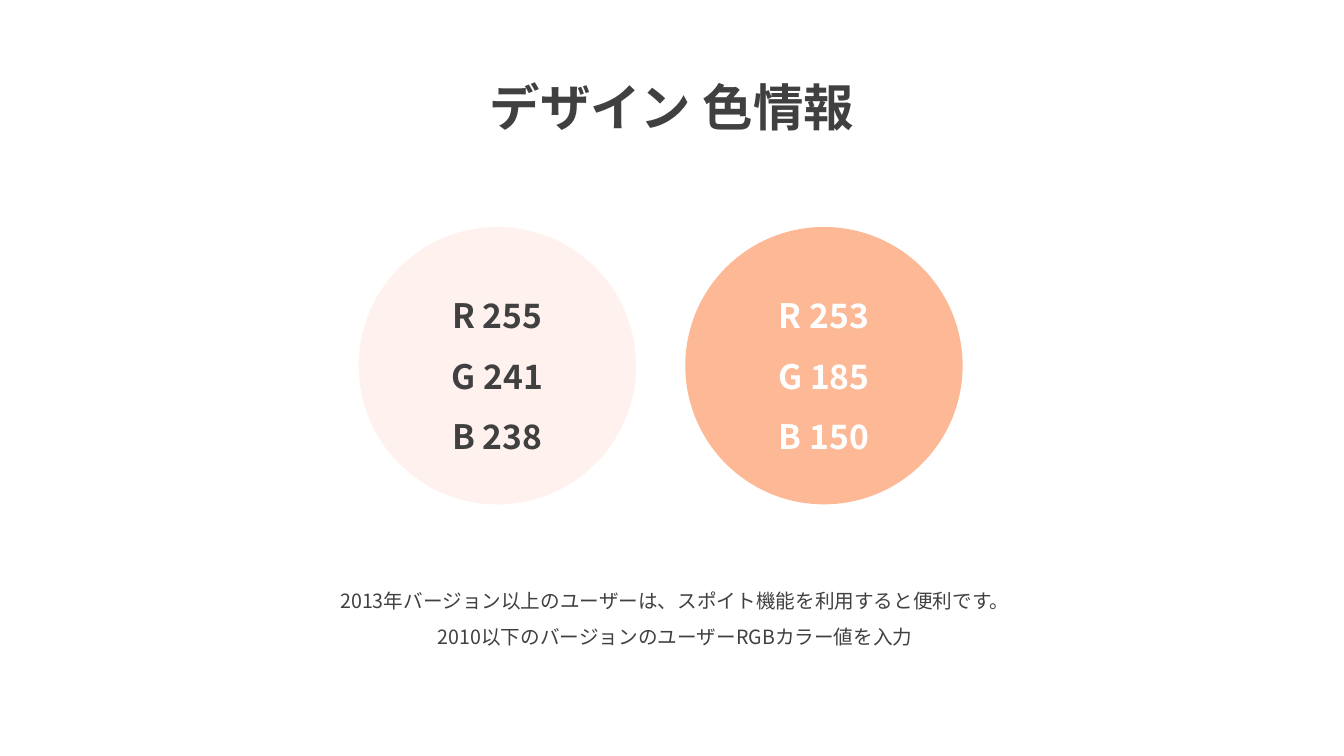
from lxml import etree
from pptx import Presentation
from pptx.dml.color import RGBColor
from pptx.enum.shapes import MSO_SHAPE
from pptx.enum.text import MSO_ANCHOR, MSO_AUTO_SIZE, PP_ALIGN
from pptx.oxml.ns import qn
from pptx.util import Cm, Pt

OVAL = MSO_SHAPE.OVAL
TOP, MIDDLE = MSO_ANCHOR.TOP, MSO_ANCHOR.MIDDLE
CENTER = PP_ALIGN.CENTER
NO_AUTOFIT = MSO_AUTO_SIZE.NONE

FONT = "Noto Sans CJK KR"
DARK = RGBColor(0x40, 0x40, 0x40)
WHITE = RGBColor(0xFF, 0xFF, 0xFF)
BLUSH = RGBColor(255, 241, 238)
PEACH = RGBColor(253, 185, 150)

TITLE = "デザイン 色情報"
SWATCHES = [(BLUSH, DARK), (PEACH, WHITE)]
NOTES = [
    "2013年バージョン以上のユーザーは、スポイト機能を利用すると便利です。",
    "2010以下のバージョンのユーザーRGBカラー値を入力",
]

SWATCH_LEFT, SWATCH_TOP = 9.04, 5.72
SWATCH_SIZE, SWATCH_GAP = 6.99, 1.24


def write_lines(shape, lines, size, color, bold, anchor):
    frame = shape.text_frame
    frame.word_wrap = True
    frame.auto_size = NO_AUTOFIT
    frame.vertical_anchor = anchor
    for index, line in enumerate(lines):
        paragraph = frame.add_paragraph() if index else frame.paragraphs[0]
        paragraph.alignment = CENTER
        paragraph.line_spacing = 1.5
        run = paragraph.add_run()
        run.text = line
        font = run.font
        font.name = FONT
        font.size = Pt(size)
        font.bold = bold
        font.color.rgb = color
        properties = run._r.get_or_add_rPr()
        etree.SubElement(properties, qn("a:ea")).set("typeface", FONT)


def add_swatch(slide, index, fill, text_color):
    left = SWATCH_LEFT + index * (SWATCH_SIZE + SWATCH_GAP)
    swatch = slide.shapes.add_shape(
        OVAL, Cm(left), Cm(SWATCH_TOP), Cm(SWATCH_SIZE), Cm(SWATCH_SIZE))
    swatch.shadow.inherit = False
    swatch.fill.solid()
    swatch.fill.fore_color.rgb = fill
    swatch.line.fill.background()
    lines = [f"{channel} {value}" for channel, value in zip("RGB", fill)]
    write_lines(swatch, lines, 24, text_color, True, MIDDLE)


def main():
    presentation = Presentation()
    presentation.slide_width = Cm(33.87)
    presentation.slide_height = Cm(19.05)
    slide = presentation.slides.add_slide(presentation.slide_layouts[5])

    title = slide.shapes.title
    title.left, title.top = Cm(10.77), Cm(1.02)
    title.width, title.height = Cm(12.32), Cm(2.31)
    write_lines(title, [TITLE], 36, DARK, True, TOP)

    for index, (fill, text_color) in enumerate(SWATCHES):
        add_swatch(slide, index, fill, text_color)

    notes = slide.shapes.add_textbox(Cm(6.4), Cm(14.43), Cm(21.23), Cm(1.96))
    write_lines(notes, NOTES, 14, DARK, False, TOP)

    presentation.save("out.pptx")


if __name__ == "__main__":
    main()
